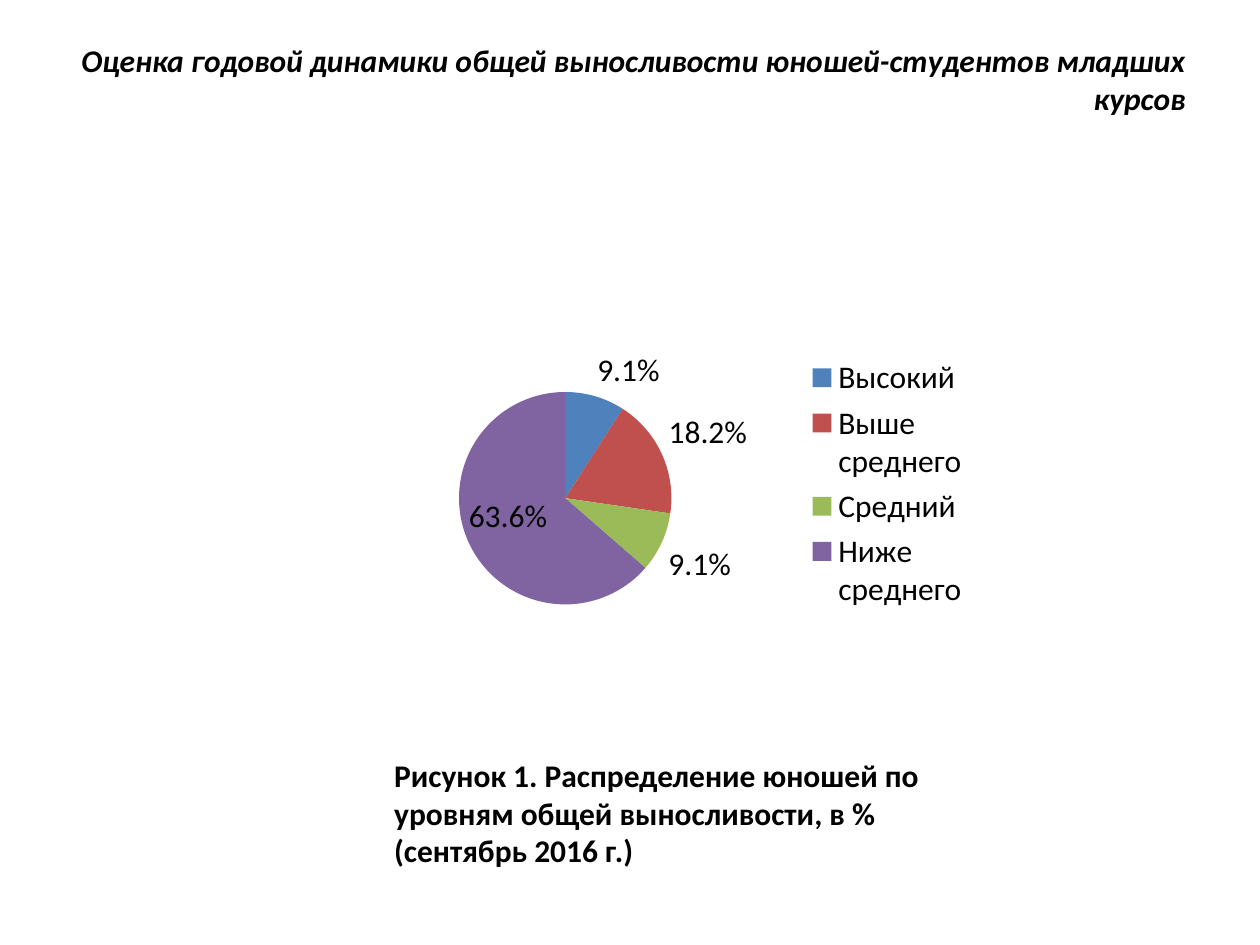
from lxml import etree
from pptx import Presentation, util as u
from pptx.chart.data import CategoryChartData
from pptx.dml.color import RGBColor
from pptx.enum import chart as ch, text
from pptx.oxml import parse_xml
from pptx.oxml.ns import nsdecls, qn

HUES = {
    "ink": "000000",
    "Высокий": "4F81BD",
    "Выше среднего": "C0504D",
    "Средний": "9BBB59",
    "Ниже среднего": "8064A2",
}
rates = {"Высокий": 9.1, "Выше среднего": 18.2, "Средний": 9.1, "Ниже среднего": 63.6}

deck = Presentation()
deck.slide_width, deck.slide_height = u.Inches(10), u.Inches(7.5)
wide, high = deck.slide_width / 100, deck.slide_height / 100
slide = deck.slides.add_slide(deck.slide_layouts[6])


def style(font, bold=False, slant=False):
    font.name, font.size = "Calibri", u.Pt(18)
    font.bold, font.italic = bold, slant
    font.color.rgb = RGBColor.from_string(HUES["ink"])


def layout(x, y, w, h, inner=False):
    node = parse_xml(f"<c:layout {nsdecls('c')}><c:manualLayout/></c:layout>")
    parts = {"layoutTarget": "inner"} if inner else {}
    parts |= {"xMode": "edge", "yMode": "edge", "x": x, "y": y, "w": w, "h": h}
    for tag, val in parts.items():
        etree.SubElement(node[0], qn(f"c:{tag}")).set("val", str(val))
    return node


data = CategoryChartData()
data.categories = list(rates)
data.add_series("Series 1", list(rates.values()))
chart = slide.shapes.add_chart(
    ch.XL_CHART_TYPE.PIE,
    int(28 * wide), int(24.8 * high), int(49.6 * wide), int(51.73 * high), data,
).chart
style(chart.font)
chart.has_title = False
chart.has_legend = True
chart.legend.position = ch.XL_LEGEND_POSITION.RIGHT
chart.legend.include_in_layout = False

plot = chart.plots[0]
plot.vary_by_categories = True
pie = plot.series[0]
for i, name in enumerate(rates):
    fill = pie.points[i].format.fill
    fill.solid()
    fill.fore_color.rgb = RGBColor.from_string(HUES[name])

tags = pie.data_labels
tags.show_percentage, tags.show_value = True, False
tags.number_format, tags.number_format_is_linked = "0.0%", False
tags.position = ch.XL_LABEL_POSITION.BEST_FIT
style(tags.font)

area = chart._chartSpace.chart.plotArea
for old in area.findall(qn("c:layout")):
    area.remove(old)
area.insert(0, layout(0.17, 0.32, 0.34, 0.44, True))
key = chart.legend._element
for old in key.findall(qn("c:layout")):
    key.remove(old)
key.find(qn("c:legendPos")).addnext(layout(0.72, 0.24, 0.27, 0.54))

lines = [
    ("Рисунок 1. Распределение юношей по уровням общей выносливости, в % (сентябрь 2016 г.)",
     30.3, 79.33, 50.1, 17.47, text.PP_ALIGN.LEFT, text.MSO_ANCHOR.TOP, False),
    ("Оценка годовой динамики общей выносливости юношей-студентов младших курсов",
     4.3, 0, 90.8, 16.67, text.PP_ALIGN.RIGHT, text.MSO_ANCHOR.MIDDLE, True),
]
for words, x, y, w, h, align, anchor, slant in lines:
    box = slide.shapes.add_textbox(int(x * wide), int(y * high), int(w * wide), int(h * high))
    frame = box.text_frame
    frame.word_wrap, frame.vertical_anchor = True, anchor
    frame.text = words
    para = frame.paragraphs[0]
    para.alignment = align
    style(para.runs[0].font, True, slant)

deck.save("out.pptx")
